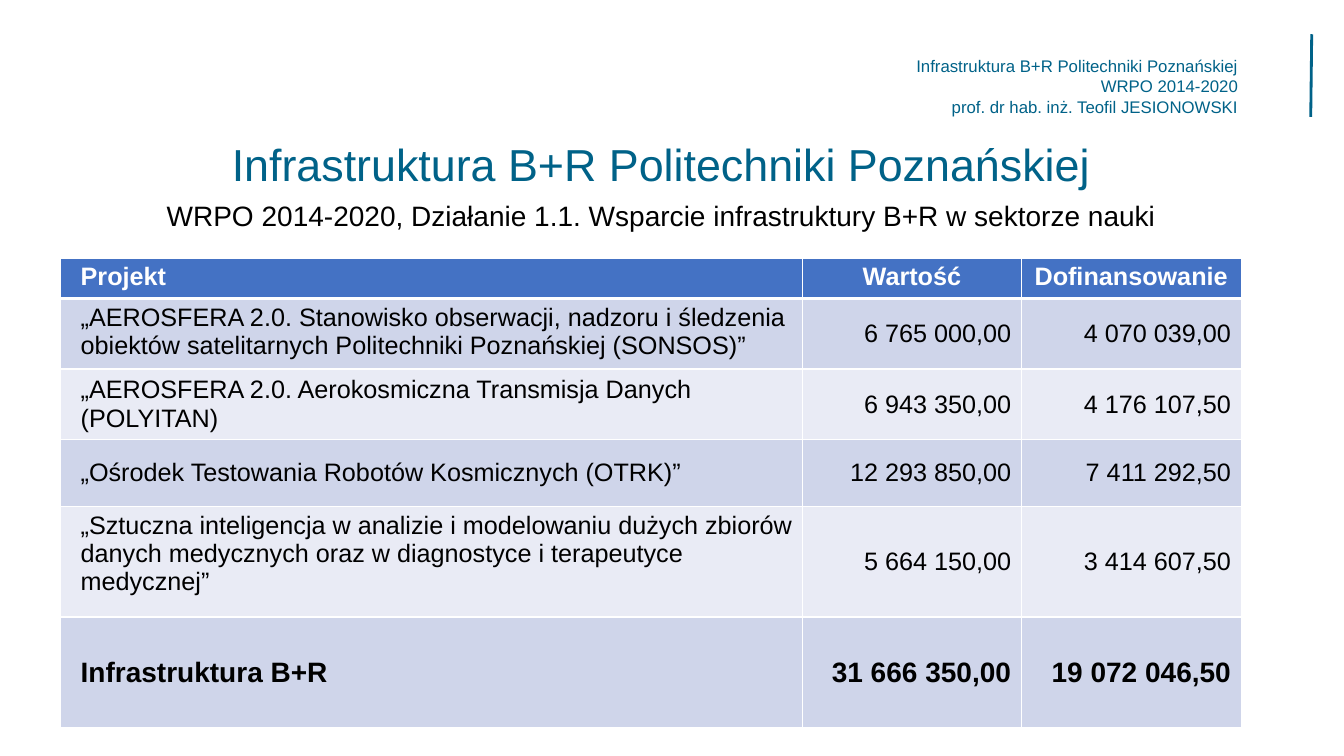
from pptx import Presentation
from pptx.dml.color import RGBColor
from pptx.enum.shapes import MSO_CONNECTOR
from pptx.enum.text import MSO_ANCHOR, PP_ALIGN
from pptx.oxml import parse_xml
from pptx.oxml.ns import nsdecls
from pptx.util import Inches, Pt
from lxml import etree

TEAL = RGBColor(0x00, 0x62, 0x88)
BLACK = RGBColor(0x00, 0x00, 0x00)
WHITE = RGBColor(0xFF, 0xFF, 0xFF)
HEADER_BLUE = RGBColor(0x44, 0x72, 0xC4)
BAND_DARK = RGBColor(0xCF, 0xD5, 0xEA)
BAND_LIGHT = RGBColor(0xE9, 0xEB, 0xF5)


def add_text(p, text, size, color, align, bold=False):
    p.alignment = align
    r = p.add_run()
    r.text = text
    r.font.name = "Arial"
    r.font.size = Pt(size)
    r.font.bold = bold
    r.font.color.rgb = color


def set_borders(cell, bottom_width):
    tc_pr = cell._tc.get_or_add_tcPr()
    for side, width in (("L", 1), ("R", 1), ("T", 1), ("B", bottom_width)):
        tc_pr.append(parse_xml(
            f'<a:ln{side} {nsdecls("a")} w="{Pt(width)}"><a:solidFill>'
            f'<a:srgbClr val="{WHITE}"/></a:solidFill></a:ln{side}>'))


prs = Presentation()
prs.slide_width = Inches(13.33)
prs.slide_height = Inches(7.5)
s = prs.slides.add_slide(prs.slide_layouts[5])

# Header block with its accent line
line = s.shapes.add_connector(MSO_CONNECTOR.STRAIGHT, Inches(13.01), Inches(0.34),
                              Inches(13), Inches(1.16))
line.line.color.rgb = TEAL
line.line.width = Pt(2)
etree.SubElement(line._element.spPr,
                 "{http://schemas.openxmlformats.org/drawingml/2006/main}effectLst")

header = s.shapes.add_textbox(Inches(7.32), Inches(0.44), Inches(4.96), Inches(0.83))
tf = header.text_frame
tf.margin_left = tf.margin_right = tf.margin_top = tf.margin_bottom = 0
tf.word_wrap = False
tf.vertical_anchor = MSO_ANCHOR.MIDDLE
HEADER_LINES = ["Infrastruktura B+R Politechniki Poznańskiej", "WRPO 2014-2020",
                "prof. dr hab. inż. Teofil JESIONOWSKI"]
for i, text in enumerate(HEADER_LINES):
    p = tf.add_paragraph() if i else tf.paragraphs[0]
    add_text(p, text, 12, TEAL, PP_ALIGN.RIGHT)

# Title and subtitle
title = s.shapes.title
title.left, title.top = Inches(0.81), Inches(1.34)
title.width, title.height = Inches(11.5), Inches(0.63)
subtitle = s.shapes.add_textbox(Inches(0.81), Inches(1.93), Inches(11.5), Inches(0.45))
HEADINGS = [
    (title, "Infrastruktura B+R Politechniki Poznańskiej", 32, TEAL),
    (subtitle, "WRPO 2014-2020, Działanie 1.1. Wsparcie infrastruktury B+R w sektorze nauki",
     20, BLACK),
]
for sp, text, size, color in HEADINGS:
    tf = sp.text_frame
    tf.word_wrap = True
    tf.vertical_anchor = MSO_ANCHOR.MIDDLE
    p = tf.paragraphs[0]
    p.line_spacing = 0.9
    add_text(p, text, size, color, PP_ALIGN.CENTER)

# Project table
ROWS = [
    ("Projekt", "Wartość", "Dofinansowanie"),
    ("„AEROSFERA 2.0. Stanowisko obserwacji, nadzoru i śledzenia obiektów "
     "satelitarnych Politechniki Poznańskiej (SONSOS)”", "6 765 000,00", "4 070 039,00"),
    ("„AEROSFERA 2.0. Aerokosmiczna Transmisja Danych (POLYITAN)",
     "6 943 350,00", "4 176 107,50"),
    ("„Ośrodek Testowania Robotów Kosmicznych (OTRK)”", "12 293 850,00", "7 411 292,50"),
    ("„Sztuczna inteligencja w analizie i modelowaniu dużych zbiorów danych medycznych "
     "oraz w diagnostyce i terapeutyce medycznej”", "5 664 150,00", "3 414 607,50"),
    ("Infrastruktura B+R", "31 666 350,00", "19 072 046,50"),
]
COL_WIDTHS = [7.36, 2.17, 2.18]
ROW_HEIGHTS = [0.38, 0.66, 0.66, 0.66, 1.1, 1.1]
TOP_ANCHORED = {(1, 0), (4, 0)}
last = len(ROWS) - 1

table = s.shapes.add_table(len(ROWS), len(COL_WIDTHS), Inches(0.6), Inches(2.56),
                           Inches(sum(COL_WIDTHS)), Inches(sum(ROW_HEIGHTS))).table
for column, width in zip(table.columns, COL_WIDTHS):
    column.width = Inches(width)
for row, height in zip(table.rows, ROW_HEIGHTS):
    row.height = Inches(height)

for i, texts in enumerate(ROWS):
    is_header = i == 0
    for j, text in enumerate(texts):
        cell = table.cell(i, j)
        set_borders(cell, 3 if is_header else 1)
        cell.fill.solid()
        cell.fill.fore_color.rgb = (HEADER_BLUE if is_header
                                    else BAND_DARK if i % 2 else BAND_LIGHT)
        if not is_header and (i, j) not in TOP_ANCHORED:
            cell.vertical_anchor = MSO_ANCHOR.MIDDLE
        p = cell.text_frame.paragraphs[0]
        if j == 0:
            align = PP_ALIGN.LEFT
            p._p.get_or_add_pPr().set("marL", str(Inches(0.1)))
        else:
            align = PP_ALIGN.CENTER if is_header else PP_ALIGN.RIGHT
        add_text(p, text, 20 if i == last else 18, WHITE if is_header else BLACK,
                 align, bold=i in (0, last))

prs.save("out.pptx")
